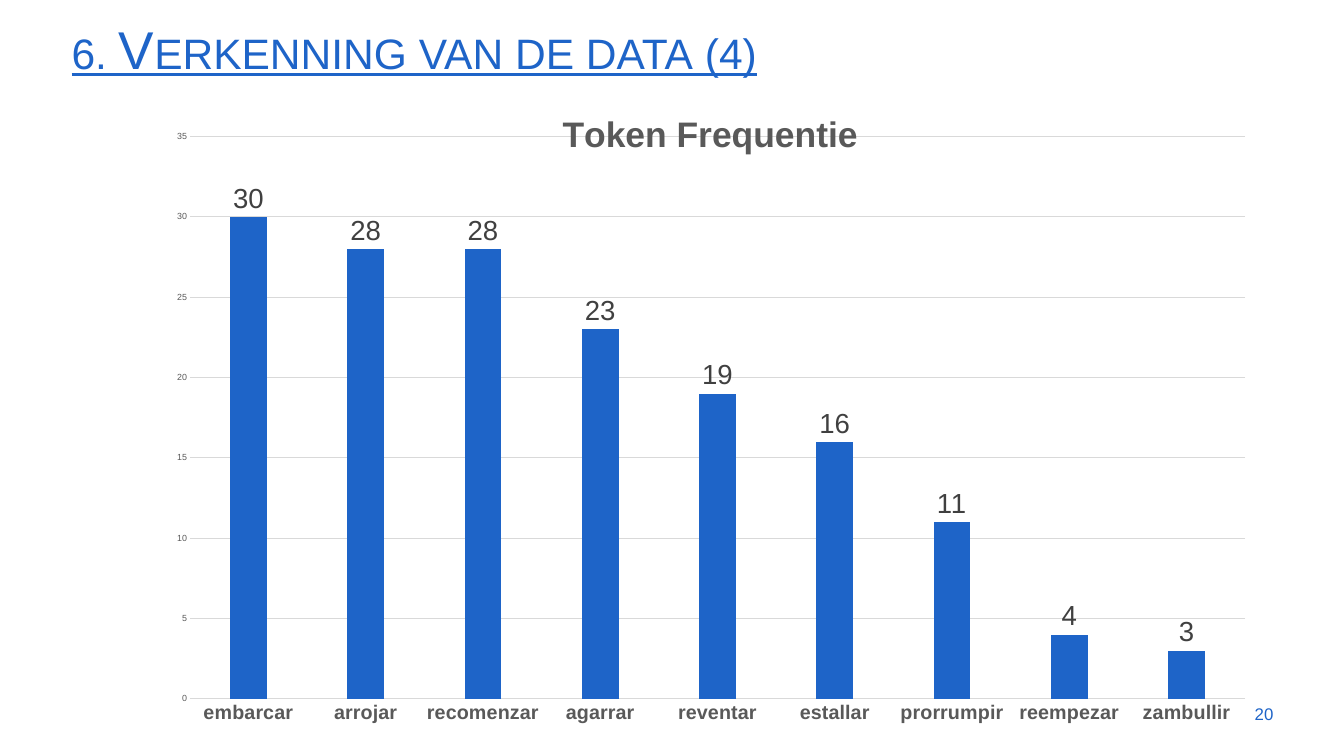
from lxml import etree
from pptx import Presentation
from pptx import util as u
from pptx.chart.data import CategoryChartData
from pptx.dml.color import RGBColor
from pptx.enum import chart as ch, text
from pptx.oxml import parse_xml
from pptx.oxml.ns import nsdecls, qn

COLORS = {"blue": "1E64C8", "grey": "595959", "dark": "404040", "rule": "D9D9D9"}
FREQUENCIES = {
    "embarcar": 30, "arrojar": 28, "recomenzar": 28, "agarrar": 23, "reventar": 19,
    "estallar": 16, "prorrumpir": 11, "reempezar": 4, "zambullir": 3,
}


def style_font(font, size, color, bold=False):
    font.name = "Arial"
    font.size = u.Pt(size)
    font.bold = bold
    font.color.rgb = RGBColor.from_string(COLORS[color])


def write(frame, content, size, color, align=None, anchor=None, bold=False):
    """Put one formatted run into a text frame and return the run."""
    frame.word_wrap = True
    frame.vertical_anchor = anchor
    paragraph = frame.paragraphs[0]
    paragraph.alignment = align
    run = paragraph.add_run()
    run.text = content
    style_font(run.font, size, color, bold)
    return run


prs = Presentation()
prs.slide_width, prs.slide_height = u.Cm(48.16), u.Cm(27.1)
slide = prs.slides.add_slide(prs.slide_layouts[5])

# Heading
heading = slide.shapes.title
heading.left, heading.top = u.Cm(2.31), u.Cm(0.71)
heading.width, heading.height = u.Cm(43.64), u.Cm(2.39)
heading_run = write(heading.text_frame, "6. Verkenning van de data (4)", 54, "blue",
                    text.PP_ALIGN.LEFT, text.MSO_ANCHOR.TOP)
heading_run.font.underline = True
heading_run.font._element.set("cap", "small")
heading.text_frame.paragraphs[0].line_spacing = 0.9

# Token frequency chart
data = CategoryChartData()
data.categories = list(FREQUENCIES)
data.add_series("Token Frequentie", list(FREQUENCIES.values()))
chart = slide.shapes.add_chart(
    ch.XL_CHART_TYPE.COLUMN_CLUSTERED,
    u.Cm(5.82), u.Cm(2.59), u.Cm(39.19), u.Cm(23.72), data).chart
chart.has_legend = False
chart.font.name = "Arial"
chart.font.size = u.Pt(10)

title_run = chart.chart_title.text_frame.paragraphs[0].add_run()
title_run.text = "Token Frequentie"
style_font(title_run.font, 36, "grey", bold=True)
chart.chart_title.include_in_layout = True

# Fixed places for the chart title and the plot area, as fractions of the chart
title_layout = parse_xml(
    f'<c:layout {nsdecls("c")}><c:manualLayout><c:xMode val="edge"/><c:yMode val="edge"/>'
    '<c:x val="0.36"/><c:y val="0.05"/></c:manualLayout></c:layout>')
plot_layout = parse_xml(
    f'<c:layout {nsdecls("c")}><c:manualLayout><c:layoutTarget val="inner"/>'
    '<c:xMode val="edge"/><c:yMode val="edge"/><c:x val="0.025"/><c:y val="0.097"/>'
    '<c:w val="0.965"/><c:h val="0.85"/></c:manualLayout></c:layout>')
title_element = chart.chart_title._element
plot_element = chart._chartSpace.chart.plotArea
for parent in (title_element, plot_element):
    for old in parent.findall(qn("c:layout")):
        parent.remove(old)
title_element.find(qn("c:tx")).addnext(title_layout)
plot_element.insert(0, plot_layout)

verbs = chart.category_axis
counts = chart.value_axis
for axis, size, bold in ((verbs, 20, True), (counts, 9, False)):
    axis.major_tick_mark = axis.minor_tick_mark = ch.XL_TICK_MARK.NONE
    style_font(axis.tick_labels.font, size, "grey", bold)
counts.minimum_scale, counts.maximum_scale, counts.major_unit = 0, 35, 5
counts.has_major_gridlines = True
counts.format.line.fill.background()
for line in (verbs.format.line, counts.major_gridlines.format.line):
    line.color.rgb = RGBColor.from_string(COLORS["rule"])
    line.width = u.Pt(0.75)

bars = chart.plots[0]
bars.gap_width, bars.overlap = 219, -27
bars.vary_by_categories = False
fill = bars.series[0].format.fill
fill.solid()
fill.fore_color.rgb = RGBColor.from_string(COLORS["blue"])
bars.has_data_labels = True
labels = bars.data_labels
labels.show_value = True
labels.position = ch.XL_LABEL_POSITION.OUTSIDE_END
style_font(labels.font, 28, "dark")

# Page number
page = slide.shapes.add_textbox(u.Cm(43.31), u.Cm(24.87), u.Cm(2.57), u.Cm(1.45))
write(page.text_frame, "20", 17.1, "blue", text.PP_ALIGN.RIGHT, text.MSO_ANCHOR.MIDDLE)

prs.save("out.pptx")
